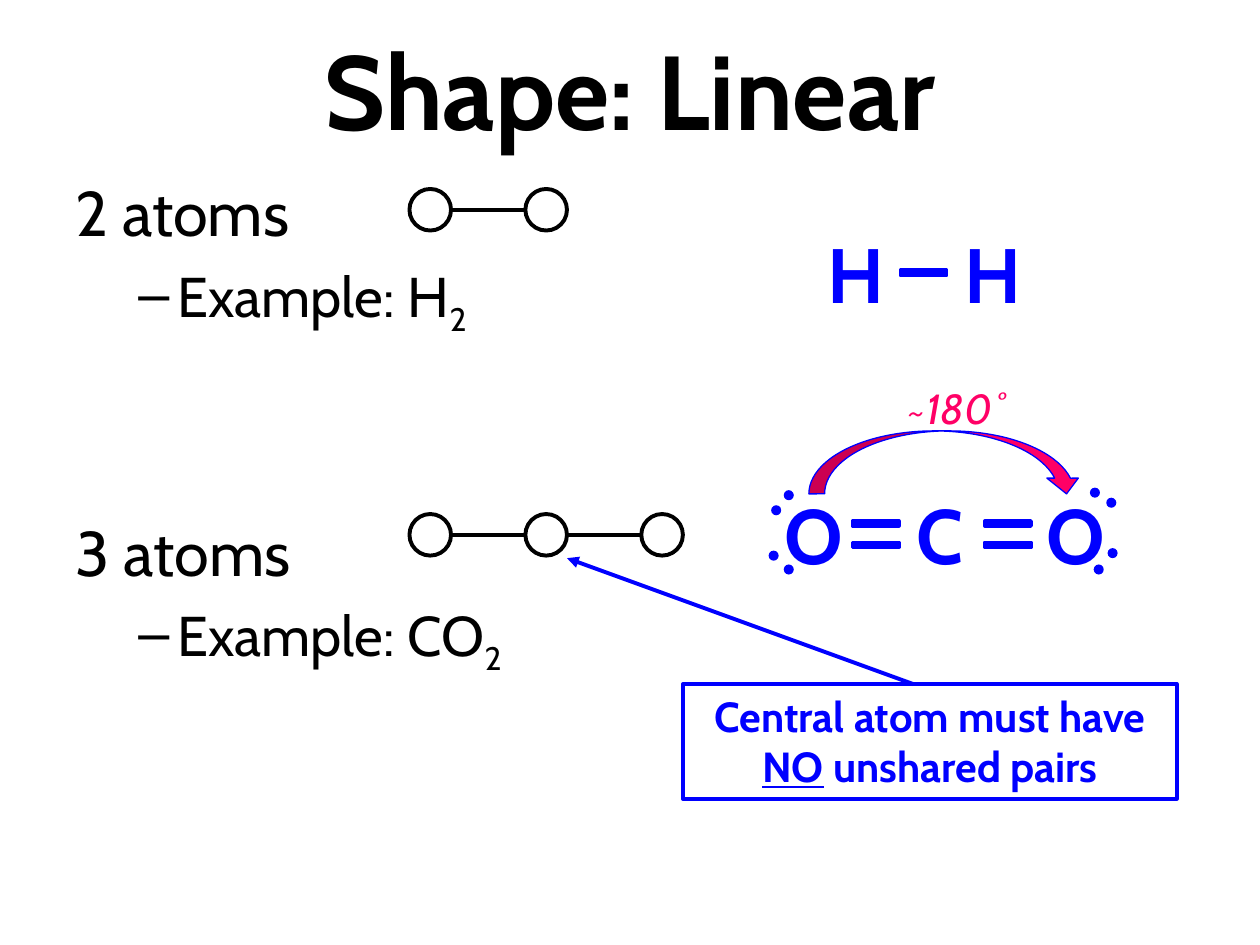
from lxml import etree
from pptx import Presentation
from pptx.dml.color import RGBColor
from pptx.enum.shapes import MSO_CONNECTOR, MSO_SHAPE
from pptx.enum.text import MSO_ANCHOR, PP_ALIGN
from pptx.oxml.ns import qn
from pptx.util import Inches, Pt

FONT = "Cabin"
COLORS = {"black": "000000", "white": "FFFFFF", "blue": "0000FF", "pink": "FF0066"}
LEFT, CENTER = PP_ALIGN.LEFT, PP_ALIGN.CENTER
TOP, MIDDLE = MSO_ANCHOR.TOP, MSO_ANCHOR.MIDDLE
OVAL, RECT = MSO_SHAPE.OVAL, MSO_SHAPE.RECTANGLE
MINUS, ARC_ARROW = MSO_SHAPE.MATH_MINUS, MSO_SHAPE.CURVED_DOWN_ARROW
STRAIGHT = MSO_CONNECTOR.STRAIGHT

ATOM_SIZE, ATOM_STEP = 0.33, 0.92
DOT_SIZE = 0.08
LONE_PAIR_DOTS = [
    (6.12, 4.01), (6.22, 3.89), (8.65, 3.87), (8.78, 3.95),
    (6.22, 4.48), (6.10, 4.37), (8.68, 4.48), (8.79, 4.35),
]


def rgb(name):
    return RGBColor.from_string(COLORS[name])


def add_para(frame, spans, size, color="black", align=LEFT, before=0, **font):
    """Add a paragraph of (text, extra) spans; extra is "sub", "underline" or ""."""
    para = frame.paragraphs[0]
    if para.runs:
        para = frame.add_paragraph()
    para.alignment = align
    para.space_before = Pt(before)
    for text, extra in spans:
        span = para.add_run()
        span.text = text
        span.font.name = FONT
        span.font.size = Pt(size)
        span.font.color.rgb = rgb(color)
        for key, value in font.items():
            setattr(span.font, key, value)
        if extra == "underline":
            span.font.underline = True
        elif extra == "sub":
            span.font._element.set("baseline", "-25000")
    return para


def add_dash(para):
    """Give a paragraph a hanging dash bullet."""
    props = para._p.get_or_add_pPr()
    props.set("marL", str(Inches(0.81)))
    props.set("indent", str(-Inches(0.31)))
    etree.SubElement(props, qn("a:buChar")).set("char", "–")


def add_box(shapes, left, top, width, height, anchor=TOP):
    box = shapes.add_textbox(Inches(left), Inches(top), Inches(width), Inches(height))
    box.text_frame.word_wrap = True
    box.text_frame.vertical_anchor = anchor
    return box.text_frame


def add_figure(shapes, kind, left, top, width, height, fill=None, line=None, weight=2.25):
    figure = shapes.add_shape(kind, Inches(left), Inches(top), Inches(width), Inches(height))
    figure.shadow.inherit = False
    if fill:
        figure.fill.solid()
        figure.fill.fore_color.rgb = rgb(fill)
    else:
        figure.fill.background()
    if line:
        figure.line.color.rgb = rgb(line)
        figure.line.width = Pt(weight)
    else:
        figure.line.fill.background()
    return figure


def add_line(shapes, start, end, color, arrow=False):
    points = [Inches(value) for value in (*start, *end)]
    line = shapes.add_connector(STRAIGHT, *points)
    line.line.color.rgb = rgb(color)
    line.line.width = Pt(2.25)
    if arrow:
        etree.SubElement(line.line._get_or_add_ln(), qn("a:tailEnd")).set("type", "triangle")
    etree.SubElement(line._element.spPr, qn("a:effectLst"))


def add_chain(page, count, top):
    """Draw a row of open circles joined by single bonds."""
    shapes = page.shapes.add_group_shape().shapes
    middle = top + ATOM_SIZE / 2
    for index in range(count):
        left = 3.25 + index * ATOM_STEP
        add_figure(shapes, OVAL, left, top, ATOM_SIZE, ATOM_SIZE, "white", "black")
        if index:
            add_line(shapes, (left - ATOM_STEP + ATOM_SIZE, middle), (left, middle), "black")


def add_molecule(page, top, atoms, bonds, dots=()):
    """Draw a Lewis structure from atom letters, bond bars and electron dots."""
    shapes = page.shapes.add_group_shape().shapes
    for symbol, left in atoms:
        frame = add_box(shapes, left, top, 0.92, 0.84)
        add_para(frame, [(symbol, "")], 44, "blue", CENTER, bold=True)
    for left, bar_top in bonds:
        add_figure(shapes, MINUS, left, bar_top, 0.5, 0.17, "blue", "blue", 2)
    for left, dot_top in dots:
        add_figure(shapes, OVAL, left, dot_top, DOT_SIZE, DOT_SIZE, "blue")


def add_outline(page):
    frame = add_box(page.shapes, 0.5, 1.33, 9, 4.95)
    for heading, formula, before in (("2 atoms", "H", 0), ("3 atoms", "CO", 100)):
        add_para(frame, [(heading, "")], 36, before=before)
        add_dash(add_para(frame, [("Example: " + formula, ""), ("2", "sub")], 32, before=7))


def add_callout(page):
    box = add_figure(page.shapes, RECT, 5.42, 5.43, 3.92, 0.91, line="blue")
    frame = box.text_frame
    frame.word_wrap = True
    frame.vertical_anchor = TOP
    spans = [("Central atom must have ", ""), ("NO", "underline"), (" unshared pairs", "")]
    add_para(frame, spans, 24, "blue", CENTER, bold=True)
    add_line(page.shapes, (7.25, 5.43), (4.5, 4.43), "blue", arrow=True)


def add_angle(page):
    add_figure(page.shapes, ARC_ARROW, 6.42, 3.42, 2.17, 0.5, "pink", "blue", 0.75)
    frame = add_box(page.shapes, 6.92, 2.99, 1.33, 0.51)
    add_para(frame, [("~180˚", "")], 24, "pink", CENTER, italic=True)


def main():
    deck = Presentation()
    deck.slide_width, deck.slide_height = Inches(10), Inches(7.5)
    page = deck.slides.add_slide(deck.slide_layouts[6])

    title = add_box(page.shapes, 0.5, 0.08, 9, 1.25, MIDDLE)
    add_para(title, [("Shape: Linear", "")], 60, align=CENTER, bold=True)
    add_outline(page)
    add_chain(page, 2, 1.5)
    add_chain(page, 3, 4.08)
    add_callout(page)
    add_molecule(page, 1.75, [("H", 6.33), ("H", 7.42)], [(7.08, 2.08)])
    double_bonds = [(left, top) for left in (6.7, 7.75) for top in (4.07, 4.24)]
    add_molecule(page, 3.82, [("O", 6), ("C", 7), ("O", 8.08)], double_bonds, LONE_PAIR_DOTS)
    add_angle(page)
    deck.save("out.pptx")


if __name__ == "__main__":
    main()
